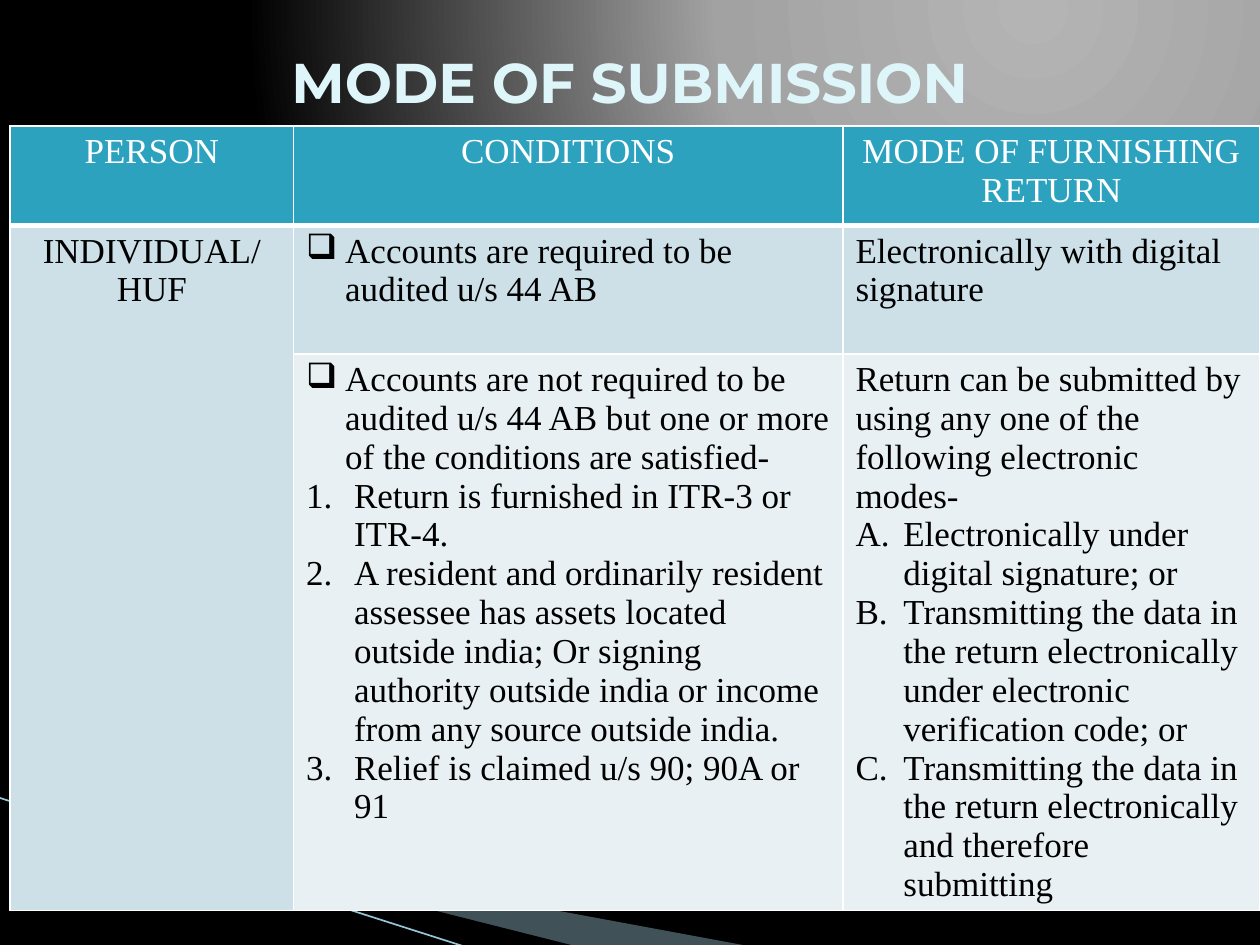
from dataclasses import dataclass
from typing import NamedTuple

from lxml.etree import SubElement
from pptx import Presentation
from pptx.dml.color import RGBColor as Rgb
from pptx.enum.shapes import MSO_CONNECTOR as Link
from pptx.enum.text import MSO_ANCHOR as Anchor, PP_ALIGN as Align
from pptx.oxml import parse_xml
from pptx.oxml.ns import nsdecls, qn
from pptx.util import Emu, Inches, Pt


@dataclass(frozen=True)
class Theme:
    head: str = "2DA2BF"
    band: str = "CDE0E8"
    pale: str = "E8F0F4"
    white: str = "FFFFFF"
    black: str = "000000"
    title: str = "DEF5FA"
    wedge: str = "A0CBDC"
    line: str = "97C5D8"
    glow: tuple = ((0, "B4B4B4"), (40, "A2A2A2"), (100, "000000"))
    serif: str = "Times New Roman"
    sans: str = "Montserrat"
    big: int = 32
    body: int = 20


class Mark(NamedTuple):
    tag: str
    key: str
    value: str
    indent: float


class Para(NamedTuple):
    text: str
    mark: Mark | None = None
    align: Align = Align.LEFT


class Wedge(NamedTuple):
    points: tuple
    color: str
    alpha: int = 100


THEME = Theme()
COLS, ROWS = 40, 30  # slide grid of quarter-inch cells
BOX = Mark("a:buChar", "char", "❑", 1.24)
NUM = Mark("a:buAutoNum", "type", "arabicPeriod", 1.5)
ABC = Mark("a:buAutoNum", "type", "alphaUcPeriod", 1.5)

WEDGES = (
    Wedge(((2.2, 26.04), (23.8, 30.04), (18.24, 30.04), (2.2, 26)), THEME.wedge, 40),
    Wedge(((2.12, 25.96), (18.28, 30.04), (14.88, 30.08), (2.16, 26)), THEME.black),
)
WIDTHS = (9, 17.44, 13.24)
HEIGHTS = (3.16, 4.08, 17.64)
FILLS = (THEME.head, THEME.band, THEME.pale)
TABLE = (
    tuple([Para(text, align=Align.CENTER)]
          for text in ("PERSON", "CONDITIONS", "MODE OF FURNISHING RETURN")),
    ([Para("INDIVIDUAL/ HUF", align=Align.CENTER)],
     [Para("Accounts are required to be audited u/s 44 AB", BOX)],
     [Para("Electronically with digital signature")]),
    ([],
     [Para("Accounts are not required to be audited u/s 44 AB but one or more "
           "of the conditions are satisfied-", BOX),
      Para("Return is furnished in ITR-3 or ITR-4.", NUM),
      Para("A resident and ordinarily resident assessee has assets located outside "
           "india; Or signing authority outside india or income from any source "
           "outside india.", NUM),
      Para("Relief is claimed u/s 90; 90A or 91", NUM)],
     [Para("Return can be submitted by using any one of the following electronic modes-"),
      Para("Electronically under digital signature; or", ABC),
      Para("Transmitting the data in the return electronically under electronic "
           "verification code; or", ABC),
      Para("Transmitting the data in the return electronically and therefore "
           "submitting", ABC)]),
)


def cell_len(count: float) -> Emu:
    return Inches(round(count / 4, 2))


def style(para, face: str, size: int, color: str, bold: bool = False) -> None:
    font = para.font
    font.name, font.size, font.bold = face, Pt(size), bold
    font.color.rgb = Rgb.from_string(color)


def paint_back(slide) -> None:
    slide.background.fill.solid()
    solid = slide.element.find(".//" + qn("a:solidFill"))
    stops = "".join(f'<a:gs pos="{pos * 1000}"><a:srgbClr val="{color}"/></a:gs>'
                    for pos, color in THEME.glow)
    grad = parse_xml(
        f'<a:gradFill {nsdecls("a")} rotWithShape="1"><a:gsLst>{stops}</a:gsLst>'
        '<a:path path="circle"><a:fillToRect l="65000" t="0" r="0" b="98000"/>'
        '</a:path></a:gradFill>')
    solid.getparent().replace(solid, grad)


def draw_wedge(slide, wedge: Wedge) -> None:
    start, *rest = [(cell_len(x), cell_len(y)) for x, y in wedge.points]
    pen = slide.shapes.build_freeform(*start, scale=1.0)
    pen.add_line_segments(rest, close=True)
    shape = pen.convert_to_shape()
    shape.shadow.inherit = False
    shape.line.fill.background()
    shape.fill.solid()
    shape.fill.fore_color.rgb = Rgb.from_string(wedge.color)
    if wedge.alpha < 100:
        tint = shape.element.spPr.find(".//" + qn("a:srgbClr"))
        SubElement(tint, qn("a:alpha"), val=str(wedge.alpha * 1000))


def draw_line(slide, *ends: float) -> None:
    line = slide.shapes.add_connector(Link.STRAIGHT, *map(cell_len, ends))
    line.line.color.rgb = Rgb.from_string(THEME.line)
    line.line.width = Pt(0.95)
    SubElement(line.element.spPr, qn("a:effectLst"))


def add_mark(para, mark: Mark) -> None:
    props = para._p.get_or_add_pPr()
    indent = cell_len(mark.indent)
    props.set("marL", str(indent))
    props.set("indent", str(-indent))
    SubElement(props, qn(mark.tag), {mark.key: mark.value})


def add_edges(cell, low: int) -> None:
    props = cell._tc.get_or_add_tcPr()
    for at, (side, width) in enumerate(zip("LRTB", (1, 1, 1, low))):
        props.insert(at, parse_xml(
            f'<a:ln{side} {nsdecls("a")} w="{Pt(width)}"><a:solidFill>'
            f'<a:srgbClr val="{THEME.white}"/></a:solidFill></a:ln{side}>'))


def fill_cell(cell, paras: list[Para], row: int) -> None:
    cell.fill.solid()
    cell.fill.fore_color.rgb = Rgb.from_string(FILLS[row])
    add_edges(cell, 1 if row else 3)
    frame = cell.text_frame
    for at, item in enumerate(paras):
        para = frame.add_paragraph() if at else frame.paragraphs[0]
        para.text, para.alignment = item.text, item.align
        if item.mark:
            add_mark(para, item.mark)
        style(para, THEME.serif, THEME.body, THEME.black if row else THEME.white)


def draw_table(slide) -> None:
    box = map(cell_len, (0.32, 4, sum(WIDTHS), sum(HEIGHTS)))
    table = slide.shapes.add_table(len(HEIGHTS), len(WIDTHS), *box).table
    table.horz_banding = False
    for col, width in zip(table.columns, WIDTHS):
        col.width = cell_len(width)
    for row, height in zip(table.rows, HEIGHTS):
        row.height = cell_len(height)
    for row, cells in enumerate(TABLE):
        for col, paras in enumerate(cells):
            fill_cell(table.cell(row, col), paras, row)
    table.cell(1, 0).merge(table.cell(2, 0))


def draw_title(slide, text: str) -> None:
    frame = slide.shapes.add_textbox(*map(cell_len, (2, 1.2, 36, 2.76))).text_frame
    frame.word_wrap, frame.vertical_anchor = True, Anchor.MIDDLE
    para = frame.paragraphs[0]
    para.text, para.alignment = text, Align.CENTER
    style(para, THEME.sans, THEME.big, THEME.title, True)


def main() -> None:
    deck = Presentation()
    deck.slide_width, deck.slide_height = cell_len(COLS), cell_len(ROWS)
    slide = deck.slides.add_slide(deck.slide_layouts[6])
    # Backdrop
    paint_back(slide)
    for wedge in WEDGES:
        draw_wedge(slide, wedge)
    draw_line(slide, -0.04, 25.32, 14.84, 30.08)
    # Content
    draw_table(slide)
    draw_title(slide, "MODE OF SUBMISSION")
    deck.save("out.pptx")


if __name__ == "__main__":
    main()
